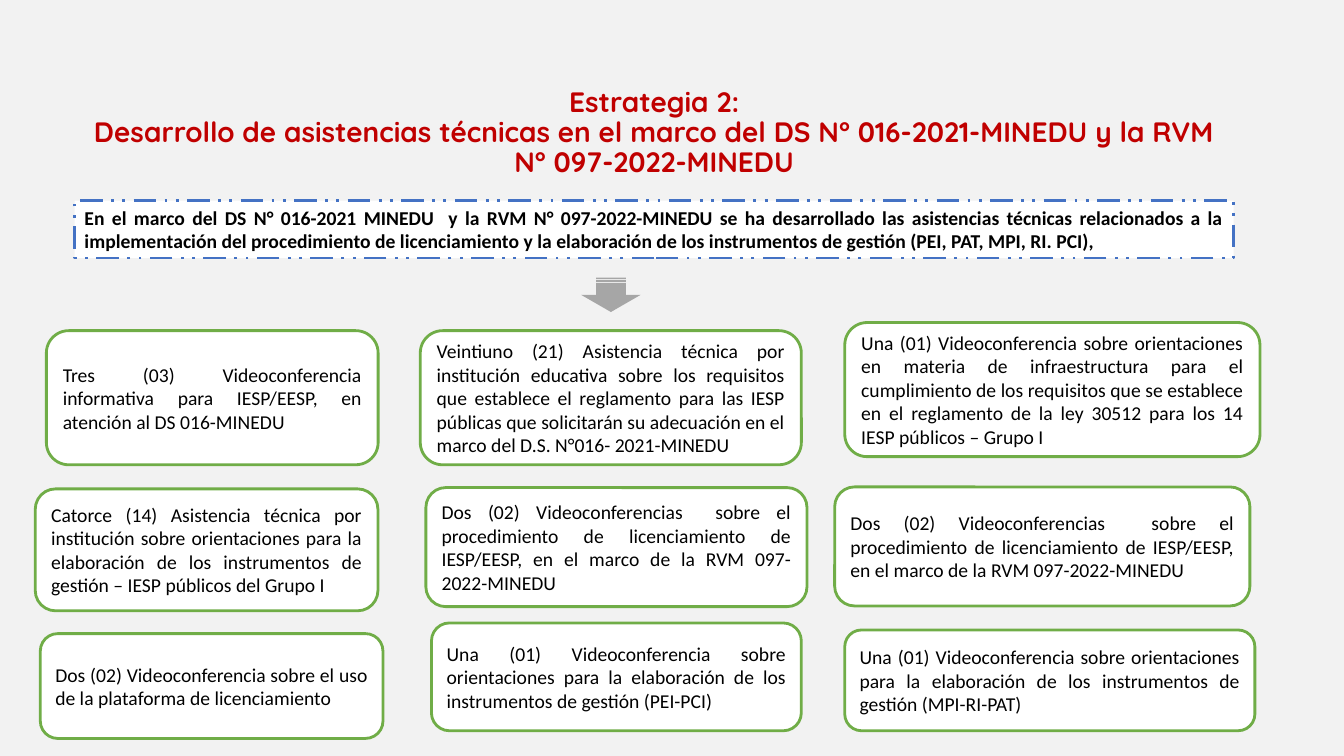
"""Build the slide on strategy 2: technical assistance for licensing."""
from dataclasses import dataclass

from pptx import Presentation
from pptx.dml.color import RGBColor as RGB
from pptx.enum.dml import MSO_LINE as Dash
from pptx.enum.shapes import MSO_SHAPE as Kind
from pptx.enum.text import MSO_ANCHOR as Anchor, MSO_AUTO_SIZE as Fit, PP_ALIGN as Align
from pptx.util import Pt


@dataclass(frozen=True)
class Theme:
    back: RGB = RGB(0xF2, 0xF2, 0xF2)
    white: RGB = RGB(0xFF, 0xFF, 0xFF)
    black: RGB = RGB(0, 0, 0)
    red: RGB = RGB(0xC0, 0, 0)
    blue: RGB = RGB(0x44, 0x72, 0xC4)
    green: RGB = RGB(0x70, 0xAD, 0x47)
    gray: RGB = RGB(0xA6, 0xA6, 0xA6)
    head: Pt = Pt(20)
    body: Pt = Pt(14)


theme = Theme()


def add_box(kind, place, fill, edge=None):
    """Add a shape without shadow, with a fill and an optional edge."""
    shape = slide.shapes.add_shape(kind, *map(Pt, place))
    shape.shadow.inherit = False
    shape.fill.solid()
    shape.fill.fore_color.rgb = fill
    if edge is None:
        shape.line.fill.background()
    else:
        shape.line.color.rgb = edge
        shape.line.width = Pt(2)
    return shape


def write(shape, text, align, anchor, color, style):
    """Fill a shape with text in one style."""
    frame = shape.text_frame
    frame.text = text
    frame.word_wrap = True
    frame.vertical_anchor = anchor
    for para in frame.paragraphs:
        para.alignment = align
        for run in para.runs:
            run.font.color.rgb = color
            for name, value in style.items():
                setattr(run.font, name, value)


deck = Presentation()
deck.slide_width, deck.slide_height = Pt(960), Pt(540)
slide = deck.slides.add_slide(deck.slide_layouts[5])
slide.background.fill.solid()
slide.background.fill.fore_color.rgb = theme.back

title = slide.shapes.title
spot = {"left": 53.3, "top": 65.5, "width": 828, "height": 59.8}
for name, value in spot.items():
    setattr(title, name, Pt(value))
write(title,
      "Estrategia 2:\nDesarrollo de asistencias técnicas en el marco del "
      "DS N° 016-2021-MINEDU y la RVM N° 097-2022-MINEDU",
      Align.CENTER, Anchor.MIDDLE, theme.red,
      {"name": "Quicksand", "size": theme.head, "bold": True})
title.text_frame.auto_size = Fit.NONE
for para in title.text_frame.paragraphs:
    para.line_spacing = 0.9

plain = {"name": "Calibri", "size": theme.body, "bold": False}
banner = add_box(Kind.RECTANGLE, (53.3, 143.3, 828, 41), theme.white, theme.blue)
banner.line.dash_style = Dash.DASH_DOT_DOT
write(banner,
      "En el marco del DS N° 016-2021 MINEDU  y la RVM N° 097-2022-MINEDU se ha "
      "desarrollado las asistencias técnicas relacionados a la implementación del "
      "procedimiento de licenciamiento y la elaboración de los instrumentos de "
      "gestión (PEI, PAT, MPI, RI. PCI),",
      Align.JUSTIFY, Anchor.TOP, theme.black, plain | {"bold": True})

license_talk = ("Dos (02) Videoconferencias  sobre el procedimiento de licenciamiento de "
                "IESP/EESP, en el marco de la RVM 097-2022-MINEDU")
tools_talk = ("Una (01) Videoconferencia sobre orientaciones para la elaboración de los "
              "instrumentos de gestión ")
cards = [
    ((33.1, 236.2, 237, 95.8),
     "Tres (03) Videoconferencia informativa para IESP/EESP, en atención al "
     "DS 016-MINEDU"),
    ((300.2, 236.2, 272.2, 95.8),
     "Veintiuno (21) Asistencia técnica por institución educativa sobre los "
     "requisitos que establece el reglamento para las IESP públicas que solicitarán "
     "su adecuación en el marco del D.S. N°016- 2021-MINEDU"),
    ((603.4, 230.4, 296.6, 95.8),
     "Una (01) Videoconferencia sobre orientaciones en materia de infraestructura "
     "para el cumplimiento de los requisitos que se establece en el reglamento de la "
     "ley 30512 para los 14 IESP públicos – Grupo I"),
    ((25.2, 349.2, 244.8, 87.1),
     "Catorce (14) Asistencia técnica por institución sobre orientaciones para la "
     "elaboración de los instrumentos de gestión – IESP públicos del Grupo I"),
    ((304.2, 348.3, 272.2, 85), license_talk),
    ((596.2, 347.8, 296.6, 85), license_talk),
    ((28.8, 452.6, 244.8, 74.9),
     "Dos (02) Videoconferencia sobre el uso de la plataforma de licenciamiento"),
    ((308.2, 445, 264.2, 77), tools_talk + "(PEI-PCI)"),
    ((603.4, 450, 293, 72), tools_talk + "(MPI-RI-PAT)"),
]
for place, text in cards:
    card = add_box(Kind.FLOWCHART_ALTERNATE_PROCESS, place, theme.white, theme.green)
    write(card, text, Align.JUSTIFY, Anchor.MIDDLE, theme.black, plain)

arrow = add_box(Kind.STRIPED_RIGHT_ARROW, (424.1, 189.4, 24.5, 42.5), theme.gray)
arrow.rotation = 90

deck.save("out.pptx")
